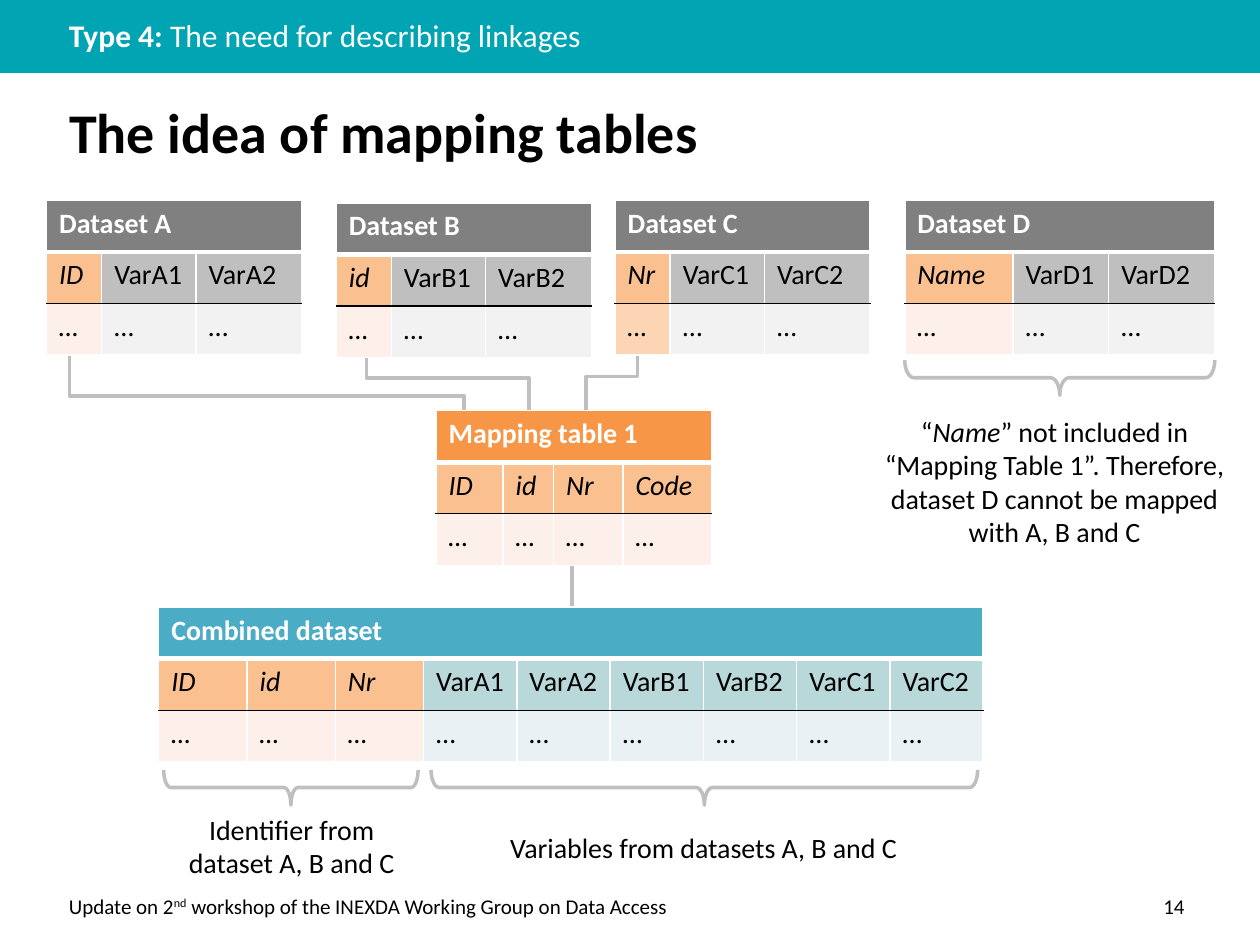
from dataclasses import dataclass
from typing import NamedTuple

from lxml.etree import SubElement
from pptx import Presentation
from pptx.dml.color import RGBColor
from pptx.enum.shapes import MSO_CONNECTOR, MSO_SHAPE
from pptx.enum.text import MSO_ANCHOR, MSO_AUTO_SIZE, PP_ALIGN
from pptx.oxml.ns import qn
from pptx.util import Cm, Pt

WHITE, BLACK, LINE_GRAY = "FFFFFF", "000000", "BFBFBF"
ID_FILL, ID_VALUE_FILL = "FAC090", "FDEFE9"
ROW_HEIGHT = 1.04


class Run(NamedTuple):
    text: str
    bold: bool = False
    italic: bool = False
    superscript: bool = False


class Box(NamedTuple):
    left: float
    top: float
    width: float
    height: float

    def lengths(self) -> list:
        return [Cm(value) for value in self]


@dataclass
class DataTable:
    title: str
    left: float
    top: float
    identifiers: list[str]
    variables: list[str]
    widths: list[float]
    title_fill: str = "808080"
    variable_fill: str = "BFBFBF"
    variable_value_fill: str = "F2F2F2"
    identifier_value_fill: str = ID_VALUE_FILL
    rule_width: float = 1


class Elbow(NamedTuple):
    start_x: float
    end_x: float
    bend_y: float


class Brace(NamedTuple):
    box: Box
    curve: float


DATASET_WIDTHS = [1.11, 1.9, 2.13]
TABLES = [
    DataTable("Dataset A", 0.94, 4.04, ["ID"], ["VarA1", "VarA2"], DATASET_WIDTHS),
    DataTable("Dataset B", 6.78, 4.09, ["id"], ["VarB1", "VarB2"], DATASET_WIDTHS),
    DataTable("Dataset C", 12.4, 4.04, ["Nr"], ["VarC1", "VarC2"], DATASET_WIDTHS,
              identifier_value_fill="FCD5B5"),
    DataTable("Dataset D", 18.24, 4.04, ["Name"], ["VarD1", "VarD2"], [2.18, 1.93, 2.13]),
    DataTable("Mapping table 1", 8.79, 8.28, ["ID", "id", "Nr", "Code"], [],
              [1.35, 1.02, 1.4, 1.78], title_fill="F79646", rule_width=0.75),
    DataTable("Combined dataset", 3.2, 12.24, ["ID", "id", "Nr"],
              [f"Var{dataset}{number}" for dataset in "ABC" for number in (1, 2)],
              [1.78] * 3 + [1.88] * 6, title_fill="4BACC6", variable_fill="B8D8DA",
              variable_value_fill="E9F1F5", rule_width=0.75),
]
ELBOWS = [Elbow(1.4, 9.35, 7.98), Elbow(7.39, 10.67, 7.62), Elbow(12.85, 11.81, 7.59)]
ELBOW_TOP, ELBOW_BOTTOM = 7.11, 8.31
BRACES = [
    Brace(Box(3.3, 15.52, 5.13, 0.71), 0.2),
    Brace(Box(8.69, 15.52, 11.02, 0.71), 0.23),
    Brace(Box(18.24, 7.26, 6.25, 0.71), 0.26),
]


def color(hex_value: str) -> RGBColor:
    return RGBColor.from_string(hex_value)


def write_text(text_frame, *runs: Run, size: float = 16, font_color: str = BLACK,
               align=PP_ALIGN.LEFT) -> None:
    paragraph = text_frame.paragraphs[0]
    paragraph.alignment = align
    for part in runs:
        run = paragraph.add_run()
        run.text = part.text
        font = run.font
        font.name, font.size = "Calibri", Pt(size)
        font.bold, font.italic = part.bold, part.italic
        font.color.rgb = color(font_color)
        if part.superscript:
            run._r.get_or_add_rPr().set("baseline", "30000")


def add_text(slide, box: Box, *runs: Run, anchor=MSO_ANCHOR.MIDDLE, **text_format) -> None:
    text_frame = slide.shapes.add_textbox(*box.lengths()).text_frame
    text_frame.word_wrap = True
    text_frame.vertical_anchor = anchor
    write_text(text_frame, *runs, **text_format)


def style_cell(cell, fill: str, top: tuple, bottom: tuple) -> None:
    properties = cell._tc.get_or_add_tcPr()
    sides = {"lnL": (WHITE, 1), "lnR": (WHITE, 1), "lnT": top, "lnB": bottom}
    for side, (line_color, width) in sides.items():
        line = SubElement(properties, qn(f"a:{side}"), w=str(Pt(width)))
        solid = SubElement(line, qn("a:solidFill"))
        SubElement(solid, qn("a:srgbClr"), val=line_color)
    cell.fill.solid()
    cell.fill.fore_color.rgb = color(fill)


def add_data_table(slide, data: DataTable) -> None:
    box = Box(data.left, data.top, sum(data.widths), 3 * ROW_HEIGHT)
    table = slide.shapes.add_table(3, len(data.widths), *box.lengths()).table
    table.first_row = table.horz_banding = False
    thin, thick, rule = (WHITE, 1), (WHITE, 3), (BLACK, data.rule_width)
    for row in table.rows:
        row.height = Cm(ROW_HEIGHT)
    for index, name in enumerate(data.identifiers + data.variables):
        table.columns[index].width = Cm(data.widths[index])
        is_identifier = index < len(data.identifiers)
        name_fill = ID_FILL if is_identifier else data.variable_fill
        value_fill = data.identifier_value_fill if is_identifier else data.variable_value_fill
        title_cell, name_cell, value_cell = (table.cell(row, index) for row in range(3))
        style_cell(title_cell, data.title_fill, thin, thick)
        style_cell(name_cell, name_fill, thick, rule)
        style_cell(value_cell, value_fill, rule, thin)
        for cell, text in ((name_cell, name), (value_cell, "…")):
            write_text(cell.text_frame, Run(text, italic=is_identifier))
    title_cell = table.cell(0, 0)
    title_cell.merge(table.cell(0, len(data.widths) - 1))
    write_text(title_cell.text_frame, Run(data.title, bold=True), font_color=WHITE)


def add_line(slide, kind, *ends: float):
    connector = slide.shapes.add_connector(kind, *(Cm(value) for value in ends))
    connector.line.color.rgb = color(LINE_GRAY)
    connector.line.width = Pt(2)
    SubElement(connector._element.spPr, qn("a:effectLst"))
    return connector


def add_elbow(slide, elbow: Elbow) -> None:
    """Draw a vertical-horizontal-vertical elbow as a quarter-turned connector."""
    drop = ELBOW_BOTTOM - ELBOW_TOP
    run = elbow.end_x - elbow.start_x
    center_x = (elbow.start_x + elbow.end_x) / 2
    center_y = (ELBOW_TOP + ELBOW_BOTTOM) / 2
    connector = add_line(slide, MSO_CONNECTOR.ELBOW, center_x - drop / 2, center_y + run / 2,
                         center_x + drop / 2, center_y - run / 2)
    properties = connector._element.spPr
    properties.find(qn("a:xfrm")).set("rot", str(90 * 60000))
    adjustments = properties.find(qn("a:prstGeom")).find(qn("a:avLst"))
    bend = round((elbow.bend_y - ELBOW_TOP) / drop * 100000)
    SubElement(adjustments, qn("a:gd"), name="adj1", fmla=f"val {bend}")


def add_brace(slide, brace: Brace) -> None:
    left, top, width, height = brace.box
    turned = Box(left + (width - height) / 2, top + (height - width) / 2, height, width)
    shape = slide.shapes.add_shape(MSO_SHAPE.LEFT_BRACE, *turned.lengths())
    shape.rotation = 270
    shape.adjustments[0] = brace.curve
    shape.shadow.inherit = False
    shape.fill.background()
    shape.line.color.rgb = color(LINE_GRAY)
    shape.line.width = Pt(2)


def main() -> None:
    presentation = Presentation()
    presentation.slide_width, presentation.slide_height = Cm(25.4), Cm(19.05)
    slide = presentation.slides.add_slide(presentation.slide_layouts[5])

    # Header band and title
    band = slide.shapes.add_shape(MSO_SHAPE.RECTANGLE, *Box(0, 0, 25.4, 1.47).lengths())
    band.shadow.inherit = False
    band.fill.solid()
    band.fill.fore_color.rgb = color("00A4B3")
    band.line.fill.background()
    add_text(slide, Box(1.14, 0.15, 20.8, 1.12), Run("Type 4: ", bold=True),
             Run("The need for describing linkages"), size=18, font_color=WHITE)
    title = slide.shapes.title
    title.left, title.top, title.width, title.height = Box(1.14, 1.8, 22.99, 1.7).lengths()
    title.text_frame.auto_size = MSO_AUTO_SIZE.NONE
    title.text_frame.vertical_anchor = MSO_ANCHOR.MIDDLE
    write_text(title.text_frame, Run("The idea of mapping tables", bold=True), size=32)

    # Links, tables and braces
    for elbow in ELBOWS:
        add_elbow(slide, elbow)
    add_line(slide, MSO_CONNECTOR.STRAIGHT, 11.53, 11.4, 11.53, 12.24)
    for data in TABLES:
        add_data_table(slide, data)
    for brace in BRACES:
        add_brace(slide, brace)

    # Explanations
    center = PP_ALIGN.CENTER
    add_text(slide, Box(3.2, 16.56, 5.36, 0.99), Run("Identifier from dataset A, B and C"),
             align=center)
    add_text(slide, Box(8.56, 16.59, 11.25, 0.99), Run("Variables from datasets A, B and C"),
             align=center)
    add_text(slide, Box(17.55, 9.02, 7.42, 1.37), Run("“"), Run("Name", italic=True),
             Run("” not included in “Mapping Table 1”. Therefore, "
                 "dataset D cannot be mapped with A, B and C"), align=center)

    # Footer
    add_text(slide, Box(1.14, 17.88, 20.45, 0.79), Run("Update on 2"),
             Run("nd", superscript=True),
             Run(" workshop of the INEXDA Working Group on Data Access"),
             size=12, anchor=MSO_ANCHOR.TOP)
    add_text(slide, Box(21.95, 17.88, 2.18, 0.79), Run("14"), size=12,
             anchor=MSO_ANCHOR.TOP, align=PP_ALIGN.RIGHT)
    presentation.save("out.pptx")


if __name__ == "__main__":
    main()
